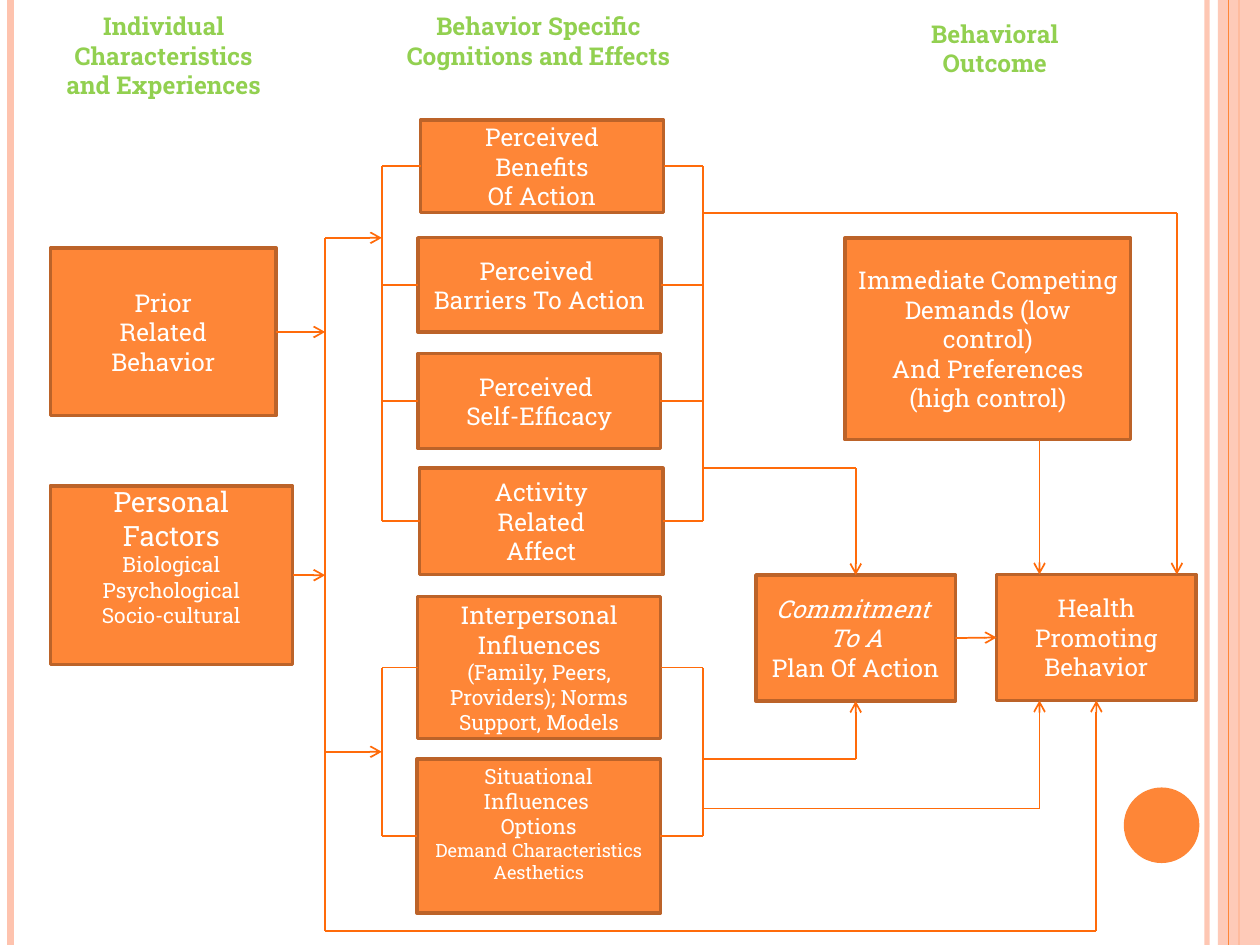
from lxml.etree import SubElement
from pptx import Presentation
from pptx.dml.color import RGBColor
from pptx.enum.shapes import MSO_CONNECTOR, MSO_SHAPE
from pptx.enum.text import MSO_ANCHOR, PP_ALIGN
from pptx.oxml.ns import qn
from pptx.util import Pt

ORANGE = RGBColor(0xFE, 0x86, 0x37)
BROWN = RGBColor(0xBC, 0x63, 0x29)
PEACH = RGBColor(0xFE, 0xC3, 0xAE)
FLOW = RGBColor(0xFF, 0x6B, 0x0A)
GREEN = RGBColor(0x92, 0xD0, 0x50)
WHITE = RGBColor(0xFF, 0xFF, 0xFF)

FONT = "Roboto Slab"
WIDTH, HEIGHT = 720, 540
TOP, LEFT, BOTTOM, RIGHT = range(4)

# Vertical rails (x) and the row (y) where the flow turns at the foot
FACTOR_RAIL, INPUT_RAIL, OUTPUT_RAIL = 185.8, 218.2, 401.8
FOOT = 532

# name: (left, top, width, height), bottom inset, [(size, italic, lines)]
BOXES = {
    "prior": ((28.8, 141.8, 129, 95.8), 3.6,
              [(14, False, ["Prior", "Related", "Behavior"])]),
    "personal": ((28.8, 277.6, 138.4, 102.2), 25.4,
                 [(16, False, ["Personal", "Factors"]),
                  (12, False, ["Biological", "Psychological", "Socio-cultural"])]),
    "benefits": ((240.3, 68.7, 139, 52.7), 3.6,
                 [(14, False, ["Perceived", "Benefits", "Of Action"])]),
    "barriers": ((238.9, 135.8, 139, 54), 3.6,
                 [(14, False, ["Perceived ", "Barriers To Action"])]),
    "efficacy": ((238.9, 202, 138.5, 54.3), 3.6,
                 [(14, False, ["Perceived ", "Self-Efficacy"])]),
    "affect": ((239.8, 267.5, 139, 60.8), 3.6,
               [(14, False, ["Activity", "Related", "Affect"])]),
    "competing": ((482.9, 135.9, 163.1, 115.4), 3.6,
                  [(14, False, ["Immediate Competing Demands (low control)",
                                "And Preferences", "(high control)"])]),
    "commitment": ((432, 328.6, 114, 72), 3.6,
                   [(14, True, ["Commitment ", "To A"]),
                    (14, False, ["Plan Of Action"])]),
    "health": ((569.5, 328.3, 114, 72), 3.6,
               [(14, False, ["Health Promoting", "Behavior"])]),
    "interpersonal": ((238.6, 341, 139, 81), 3.6,
                      [(14, False, ["Interpersonal Influences"]),
                       (12, False, ["(Family, Peers, Providers); Norms",
                                    "Support, Models"])]),
    "situational": ((238.4, 433.6, 139, 88.3), 18.2,
                    [(12, False, ["Situational", "Influences ", "Options"]),
                     (10.5, False, ["Demand Characteristics Aesthetics"])]),
}

HEADINGS = [
    ((28.8, 2.9, 129.6, 92), ["Individual", "Characteristics and Experiences"]),
    ((223.9, 2.9, 167.8, 70), ["Behavior Specific Cognitions and Effects"]),
    ((520.6, 7.2, 95.8, 41), ["Behavioral Outcome"]),
]


def set_alpha(owner, percent):
    for color in owner.iter(qn("a:srgbClr")):
        SubElement(color, qn("a:alpha"), val=str(percent * 1000))


def fill_text(frame, groups, color, bold=False):
    """Write groups of lines, one centred paragraph per line."""
    frame.word_wrap = True
    lines = [(line, size, italic) for size, italic, texts in groups for line in texts]
    for index, (line, size, italic) in enumerate(lines):
        para = frame.add_paragraph() if index else frame.paragraphs[0]
        para.alignment = PP_ALIGN.CENTER
        span = para.add_run()
        span.text = line
        span.font.color.rgb = color
        formats = {"name": FONT, "size": Pt(size), "bold": bold, "italic": italic}
        for name, value in formats.items():
            setattr(span.font, name, value)


def add_panel(page, kind, place, border=None):
    panel = page.shapes.add_shape(kind, *map(Pt, place))
    panel.shadow.inherit = False
    panel.fill.solid()
    panel.fill.fore_color.rgb = ORANGE
    if border is None:
        panel.line.fill.background()
    else:
        panel.line.color.rgb = border
        panel.line.width = Pt(2)
    return panel


def add_box(page, place, bottom_inset, groups):
    box = add_panel(page, MSO_SHAPE.RECTANGLE, place, BROWN)
    frame = box.text_frame
    frame.vertical_anchor = MSO_ANCHOR.MIDDLE
    frame.margin_bottom = Pt(bottom_inset)
    fill_text(frame, groups, WHITE)
    return box


def add_heading(page, place, lines):
    heading = page.shapes.add_textbox(*map(Pt, place))
    fill_text(heading.text_frame, [(14, False, lines)], GREEN, bold=True)


def add_line(page, start, end, arrow=False, color=FLOW, width=1):
    line = page.shapes.add_connector(MSO_CONNECTOR.STRAIGHT, *map(Pt, start + end))
    line.line.color.rgb = color
    line.line.width = Pt(width)
    if arrow:
        SubElement(line.line._get_or_add_ln(), qn("a:tailEnd"), type="arrow")
    SubElement(line._element.spPr, qn("a:effectLst"))
    return line


def side_middle(box, side):
    x, y = box.left.pt + box.width.pt / 2, box.top.pt + box.height.pt / 2
    return {TOP: (x, box.top.pt), BOTTOM: (x, box.top.pt + box.height.pt),
            LEFT: (box.left.pt, y), RIGHT: (box.left.pt + box.width.pt, y)}[side]


def link_to_rail(page, box, side, rail, arrow=False):
    start = side_middle(box, side)
    add_line(page, start, (rail, start[1]), arrow).begin_connect(box, side)


def link_into(page, box, side, row):
    """Run a vertical arrow from a row into the middle of a box side."""
    end = side_middle(box, side)
    add_line(page, (end[0], row), end, arrow=True).end_connect(box, side)


def add_decoration(page):
    edge = add_line(page, (689.8, 0), (689.8, HEIGHT), color=PEACH, width=3)
    set_alpha(edge._element, 93)
    add_line(page, (6, 0), (6, HEIGHT), color=PEACH, width=4.5)
    add_line(page, (708, 0), (708, HEIGHT), color=ORANGE, width=1.5)
    band = add_panel(page, MSO_SHAPE.RECTANGLE, (696, 0, 24, HEIGHT))
    band.fill.fore_color.rgb = PEACH
    set_alpha(band._element.spPr, 87)
    add_line(page, (702, 0), (702, HEIGHT), color=ORANGE, width=0.75)
    add_panel(page, MSO_SHAPE.OVAL, (642.2, 450, 43.2, 43.2))


def add_flow(page, boxes):
    # Prior behavior and personal factors feed the first rail
    add_line(page, (FACTOR_RAIL, 135.9), (FACTOR_RAIL, FOOT))
    for name in ("prior", "personal"):
        link_to_rail(page, boxes[name], RIGHT, FACTOR_RAIL, arrow=True)
    for row in (135.9, 429.6):
        add_line(page, (FACTOR_RAIL, row), (INPUT_RAIL, row), arrow=True)

    # Brackets on both sides of the two groups of cognitions
    for names in (("benefits", "barriers", "efficacy", "affect"),
                  ("interpersonal", "situational")):
        group = [boxes[name] for name in names]
        for side, rail in ((LEFT, INPUT_RAIL), (RIGHT, OUTPUT_RAIL)):
            for box in group:
                link_to_rail(page, box, side, rail)
            first, last = (side_middle(box, side)[1] for box in (group[0], group[-1]))
            add_line(page, (rail, first), (rail, last))

    # Routes into commitment
    commitment, health = boxes["commitment"], boxes["health"]
    middle = side_middle(commitment, TOP)[0]
    for side, row in ((TOP, 267.5), (BOTTOM, 433.6)):
        add_line(page, (OUTPUT_RAIL, row), (middle, row))
        link_into(page, commitment, side, row)

    # Routes into health promoting behavior
    link = add_line(page, side_middle(commitment, RIGHT), side_middle(health, LEFT), arrow=True)
    link.begin_connect(commitment, RIGHT)
    link.end_connect(health, LEFT)
    health_top, health_bottom = (side_middle(health, side)[1] for side in (TOP, BOTTOM))
    for column, row, end in ((594, 462, health_bottom), (672.5, 121.7, health_top)):
        add_line(page, (OUTPUT_RAIL, row), (column, row))
        add_line(page, (column, row), (column, end), arrow=True)
    add_line(page, (594, 251.3), (594, health_top), arrow=True)
    add_line(page, (FACTOR_RAIL, FOOT), (side_middle(health, BOTTOM)[0], FOOT))
    link_into(page, health, BOTTOM, FOOT)


def main():
    deck = Presentation()
    deck.slide_width, deck.slide_height = Pt(WIDTH), Pt(HEIGHT)
    page = deck.slides.add_slide(deck.slide_layouts[6])
    add_decoration(page)
    boxes = {name: add_box(page, *content) for name, content in BOXES.items()}
    for place, lines in HEADINGS:
        add_heading(page, place, lines)
    add_flow(page, boxes)
    deck.save("out.pptx")


if __name__ == "__main__":
    main()
